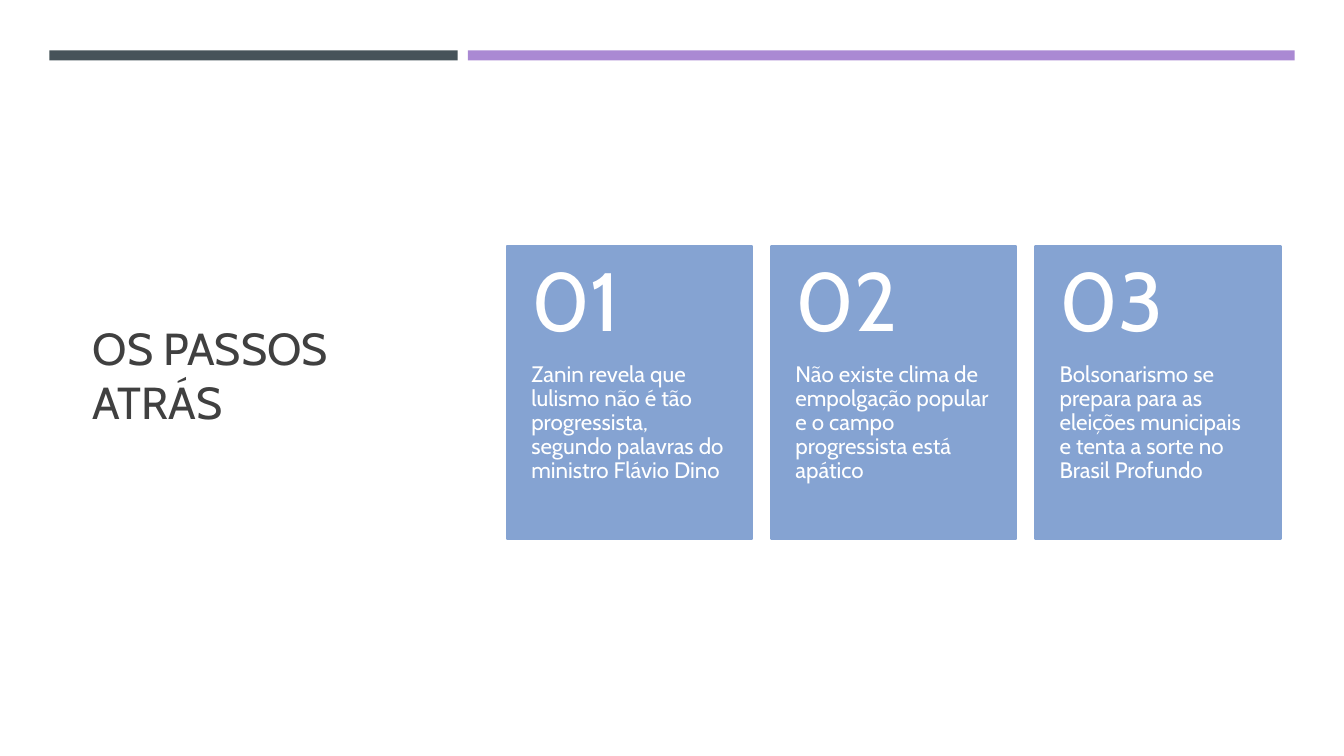
from pptx import Presentation
from pptx.dml.color import RGBColor
from pptx.enum.shapes import MSO_SHAPE
from pptx.enum.text import MSO_ANCHOR, PP_ALIGN
from pptx.util import Pt

SCALE = 9144
FONT = "Cabin"
WHITE = RGBColor(0xFF, 0xFF, 0xFF)
INK = RGBColor(0x40, 0x40, 0x40)
SLATE = RGBColor(0x46, 0x53, 0x59)
PURPLE = RGBColor(0xAA, 0x89, 0xD3)
BLUE = RGBColor(0x85, 0xA3, 0xD2)

STEPS = [
    "Zanin revela que lulismo não é tão progressista, segundo palavras do ministro Flávio Dino",
    "Não existe clima de empolgação popular e o campo progressista está apático",
    "Bolsonarismo se prepara para as eleições municipais e tenta a sorte no Brasil Profundo",
]
LEFT, TOP, WIDTH, PITCH = 503, 244, 243, 262
HEAD, BODY = 116, 175


def px(*sizes):
    return [size * SCALE for size in sizes]


def style(para, size, color):
    para.font.name = FONT
    para.font.size = Pt(size)
    para.font.color.rgb = color


def add_title(slide, text):
    title = slide.shapes.title
    title.left, title.top, title.width, title.height = px(82, 114, 334, 515)
    frame = title.text_frame
    frame.text = text
    frame.word_wrap = True
    frame.vertical_anchor = MSO_ANCHOR.MIDDLE
    para = frame.paragraphs[0]
    para.alignment = PP_ALIGN.LEFT
    style(para, 32, INK)


def add_block(slide, box, color):
    block = slide.shapes.add_shape(MSO_SHAPE.RECTANGLE, *px(*box))
    block.shadow.inherit = False
    block.fill.solid()
    block.fill.fore_color.rgb = color
    block.line.fill.background()
    return block


def add_label(slide, box, text, size, anchor, upper, lower):
    frame = slide.shapes.add_textbox(*px(*box)).text_frame
    frame.word_wrap = True
    frame.vertical_anchor = anchor
    frame.margin_left, frame.margin_right = px(24, 24)
    frame.margin_top, frame.margin_bottom = px(upper, lower)
    frame.text = text
    para = frame.paragraphs[0]
    para.line_spacing = 0.9
    style(para, size, WHITE)


def add_card(slide, index, text):
    left = LEFT + index * PITCH
    card = add_block(slide, (left, TOP, WIDTH, HEAD + BODY), BLUE)
    card.line.color.rgb = BLUE
    card.line.width = Pt(1.75)
    add_label(slide, (left, TOP + HEAD, WIDTH, BODY), text, 16, MSO_ANCHOR.TOP, 0, 36)
    add_label(slide, (left, TOP, WIDTH, HEAD), f"{index + 1:02}", 59, MSO_ANCHOR.MIDDLE, 18, 18)


def main():
    deck = Presentation()
    deck.slide_width, deck.slide_height = px(1333, 750)
    slide = deck.slides.add_slide(deck.slide_layouts[5])
    add_title(slide, "OS PASSOS ATRÁS")
    add_block(slide, (49, 50, 405, 10), SLATE)
    add_block(slide, (464, 50, 820, 10), PURPLE)
    for index, text in enumerate(STEPS):
        add_card(slide, index, text)
    deck.save("out.pptx")


if __name__ == "__main__":
    main()
